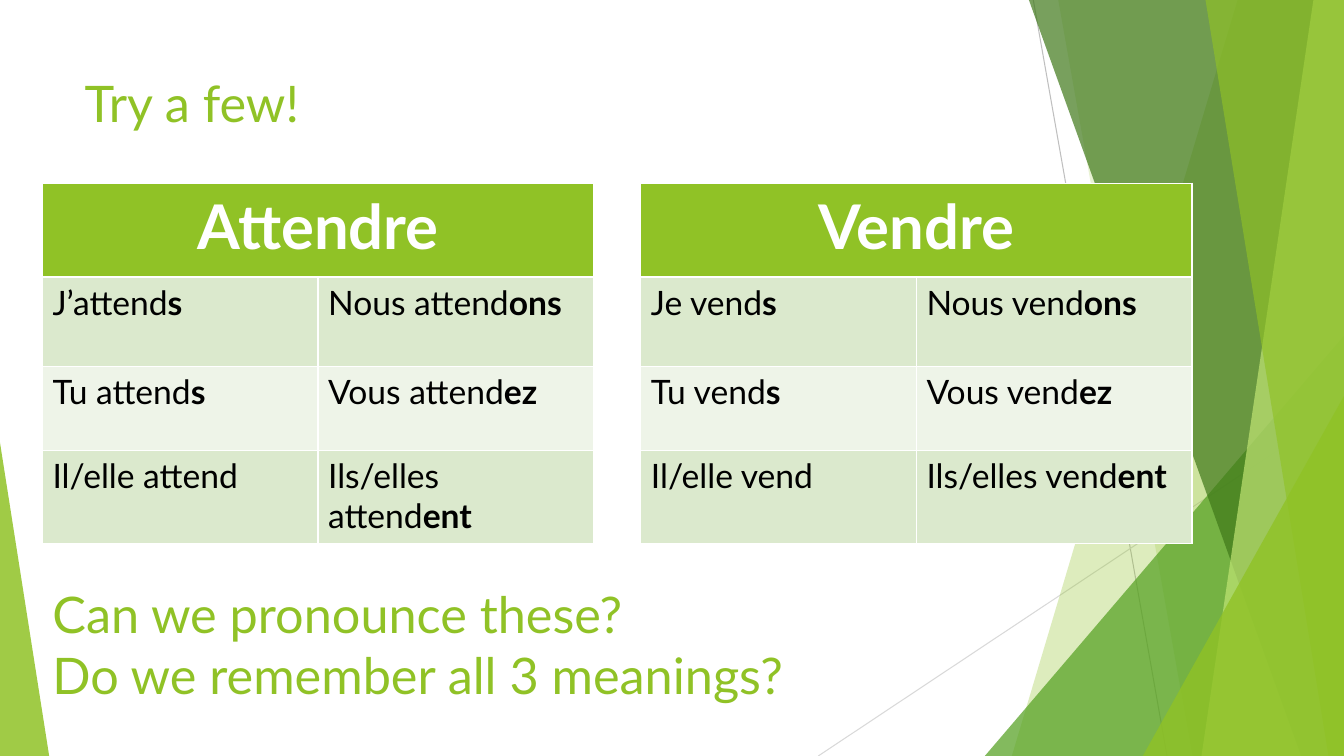
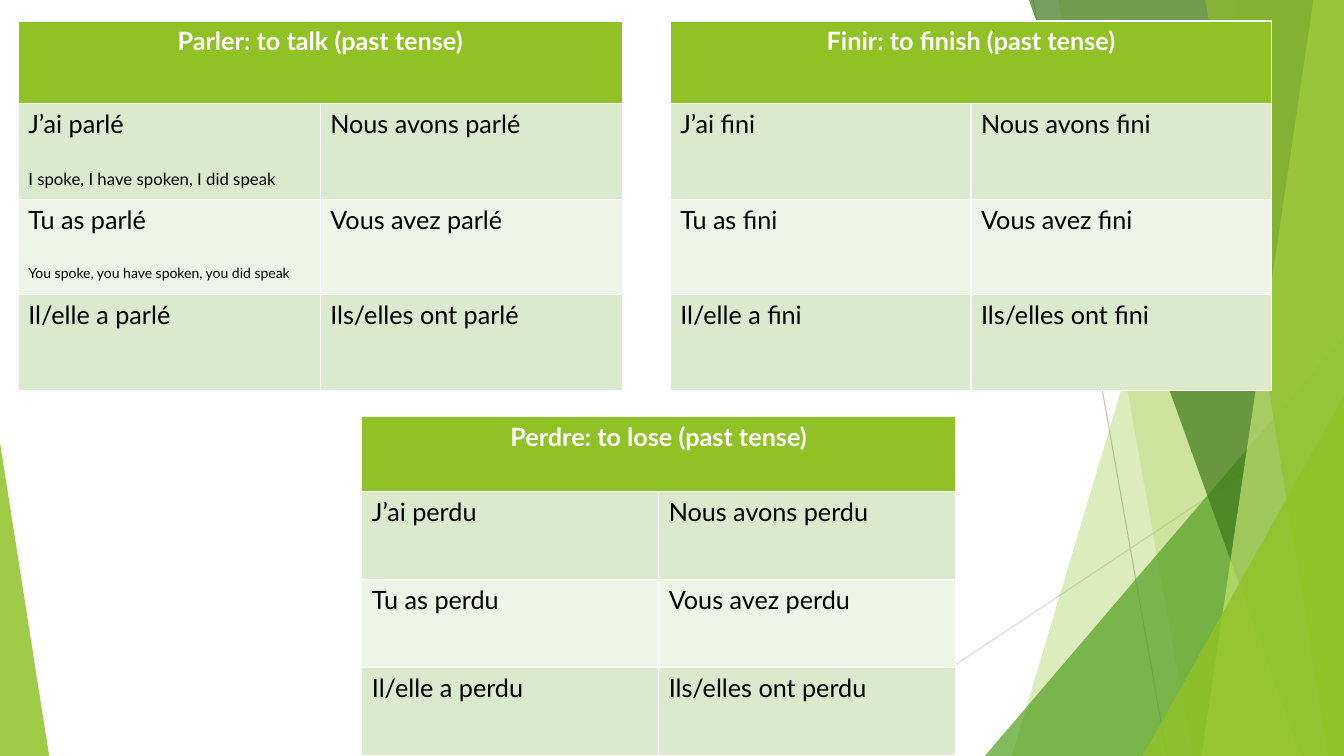
from lxml.etree import SubElement as Sub
from pptx import Presentation
from pptx.dml.color import RGBColor as RGB
from pptx.enum.shapes import MSO_CONNECTOR as Conn, MSO_SHAPE as Form
from pptx.enum.text import MSO_ANCHOR as Anchor, PP_ALIGN as Align
from pptx.oxml.ns import qn
from pptx.util import Cm, Pt

# Shared look
WIDE, HIGH = 33.87, 19.05
FONT = "Lato"
HUE = {
    "lime": "90C226", "green": "54A021", "dark": "3F7819", "pale": "C0E474",
    "white": "FFFFFF", "black": "000000", "odd": "DBE9CD", "even": "EEF4E8",
    "grey": "BFBFBF", "light": "D9D9D9",
}

# Backdrop, back to front
RULES = [  # start x, y, end x, y, hue
    (26.04, 0, 29.41, HIGH, "grey"),
    (WIDE, 10.24, 20.62, HIGH, "light"),
]
PANES = [  # band: top x, foot x; peak: left, width, height, tip
    ("band", (31.19, 25.5), "lime", 30),
    ("band", (26.67, 30.05), "lime", 20),
    ("peak", (24.82, 9.05, 10.59, 1), "green", 72),
    ("band", (25.93, 32.79), "dark", 70),
    ("band", (33.1, 30.28), "pale", 70),
    ("band", (30.38, 33.48), "lime", 65),
    ("peak", (28.8, 5.07, 9.07, 1), "lime", 80),
    ("peak", (0, 1.24, 7.9, 0), "lime", 85),
]

# Content: "|" starts a bold ending
TITLE = "Try a few!"
ASK = "Can we pronounce these?\nDo we remember all 3 meanings?"
TRY = {"top": 4.62, "wide": 13.89, "rows": (2.36, 2.26, 2.11, 2.34),
       "head": 44, "size": 24}
PAST = {"top": 0.53, "rows": (2.08, 2.41, 2.41, 2.41), "head": 18, "size": 18}
DRILLS = [
    {**TRY, "left": 1.07, "name": "Attendre", "verbs": [
        ("J’attend|s", "Nous attend|ons"),
        ("Tu attend|s", "Vous attend|ez"),
        ("Il/elle attend", "Ils/elles attend|ent")]},
    {**TRY, "left": 16.15, "name": "Vendre", "verbs": [
        ("Je vend|s", "Nous vend|ons"),
        ("Tu vend|s", "Vous vend|ez"),
        ("Il/elle vend", "Ils/elles vend|ent")]},
]
TENSES = [
    {**PAST, "left": 0.46, "wide": 15.22,
     "name": "Parler: to talk (past tense)", "verbs": [
         ("J’ai parlé", "Nous avons parlé"),
         ("Tu as parlé", "Vous avez parlé"),
         ("Il/elle a parlé", "Ils/elles ont parlé")]},
    {**PAST, "left": 9.12, "top": 10.49, "wide": 14.96,
     "rows": (1.9, 2.22, 2.22, 2.22),
     "name": "Perdre: to lose (past tense)", "verbs": [
         ("J’ai perdu", "Nous avons perdu"),
         ("Tu as perdu", "Vous avez perdu"),
         ("Il/elle a perdu", "Ils/elles ont perdu")]},
    {**PAST, "left": 16.89, "wide": 15.16,
     "name": "Finir: to finish (past tense)", "verbs": [
         ("J’ai fini", "Nous avons fini"),
         ("Tu as fini", "Vous avez fini"),
         ("Il/elle a fini", "Ils/elles ont fini")]},
]
NOTES = {  # meaning under a verb, and its size
    "J’ai parlé": ("I spoke, I have spoken, I did speak", 12),
    "Tu as parlé": ("You spoke, you have spoken, you did speak", 10),
}


def tint(name):
    return RGB.from_string(HUE[name])


def style(para, size, hue, bold=False):
    for run in para.runs:
        font = run.font
        font.name, font.size, font.bold = FONT, Pt(size), bold
        font.color.rgb = tint(hue)


def place(shape, *box):
    shape.left, shape.top, shape.width, shape.height = map(Cm, box)


# Backdrop parts
def draw_rule(slide, x, y, end_x, end_y, hue):
    rule = slide.shapes.add_connector(
        Conn.STRAIGHT, Cm(x), Cm(y), Cm(end_x), Cm(end_y))
    rule.line.color.rgb = tint(hue)
    rule.line.width = Pt(0.75)
    Sub(rule._element.spPr, qn("a:effectLst"))
    return rule


def draw_pane(slide, kind, dims, hue, alpha):
    if kind == "band":
        top, foot = dims
        path = slide.shapes.build_freeform(Cm(top), 0)
        path.add_line_segments([(Cm(x), Cm(y)) for x, y in (
            (WIDE, 0), (WIDE, HIGH), (foot, HIGH))], close=True)
        pane = path.convert_to_shape()
    else:
        left, wide, high, tip = dims
        pane = slide.shapes.add_shape(
            Form.ISOSCELES_TRIANGLE, Cm(left), Cm(HIGH - high),
            Cm(wide), Cm(high))
        pane.adjustments[0] = tip
    pane.shadow.inherit = False
    pane.line.fill.background()
    pane.fill.solid()
    pane.fill.fore_color.rgb = tint(hue)
    color = pane._element.xpath("./p:spPr/a:solidFill/a:srgbClr")[0]
    Sub(color, qn("a:alpha"), val=str(alpha * 1000))
    return pane


def set_master(deck, slide):
    """Draw the backdrop, then move it to the master for every slide."""
    parts = [draw_rule(slide, *rule) for rule in RULES]
    parts += [draw_pane(slide, *pane) for pane in PANES]
    tree = deck.slide_master.element.cSld.spTree
    for num, part in enumerate(parts):
        item = part._element
        item.xpath(".//p:cNvPr")[0].set("id", str(100 + num))
        tree.insert(2 + num, item)


# Tables and text
def fill_cell(cell, text, size, hue, fill, bold=False):
    cell.fill.solid()
    cell.fill.fore_color.rgb = tint(fill)
    stem, _, end = text.partition("|")
    para = cell.text_frame.paragraphs[0]
    para.text = stem
    style(para, size, hue, bold)
    if end:
        para.add_run().text = end
        style(para, size, hue)
        para.runs[-1].font.bold = True
    if text in NOTES:
        note, small = NOTES[text]
        para = cell.text_frame.add_paragraph()
        para.text = note
        para.space_before = Pt(size * 1.2)
        style(para, small, hue)


def add_verb(slide, verb):
    rows = verb["rows"]
    grid = slide.shapes.add_table(
        len(rows), 2, Cm(verb["left"]), Cm(verb["top"]),
        Cm(verb["wide"]), Cm(sum(rows))).table
    for row, high in zip(grid.rows, rows):
        row.height = Cm(high)
    head = grid.cell(0, 0)
    head.merge(grid.cell(0, 1))
    fill_cell(head, verb["name"], verb["head"], "white", "lime", True)
    head.text_frame.paragraphs[0].alignment = Align.CENTER
    for r, pair in enumerate(verb["verbs"], 1):
        for c, text in enumerate(pair):
            fill_cell(grid.cell(r, c), text, verb["size"], "black",
                      "odd" if r % 2 else "even")


def set_text(shape, text):
    frame = shape.text_frame
    frame.text = text
    frame.word_wrap = True
    frame.vertical_anchor = Anchor.TOP
    for para in frame.paragraphs:
        para.alignment = Align.LEFT
        style(para, 36, "lime")


def main():
    deck = Presentation()
    deck.slide_width, deck.slide_height = Cm(WIDE), Cm(HIGH)

    # Practice slide
    drill = deck.slides.add_slide(deck.slide_layouts[5])
    set_master(deck, drill)
    title = drill.shapes.title
    place(title, 1.88, 1.7, 23.88, 3.66)
    set_text(title, TITLE)
    for verb in DRILLS:
        add_verb(drill, verb)
    ask = drill.shapes.add_textbox(0, 0, 0, 0)
    place(ask, 1.07, 14.58, 23.88, 3.66)
    set_text(ask, ASK)

    # Past tense slide
    past = deck.slides.add_slide(deck.slide_layouts[6])
    for verb in TENSES:
        add_verb(past, verb)

    deck.save("out.pptx")


if __name__ == "__main__":
    main()
